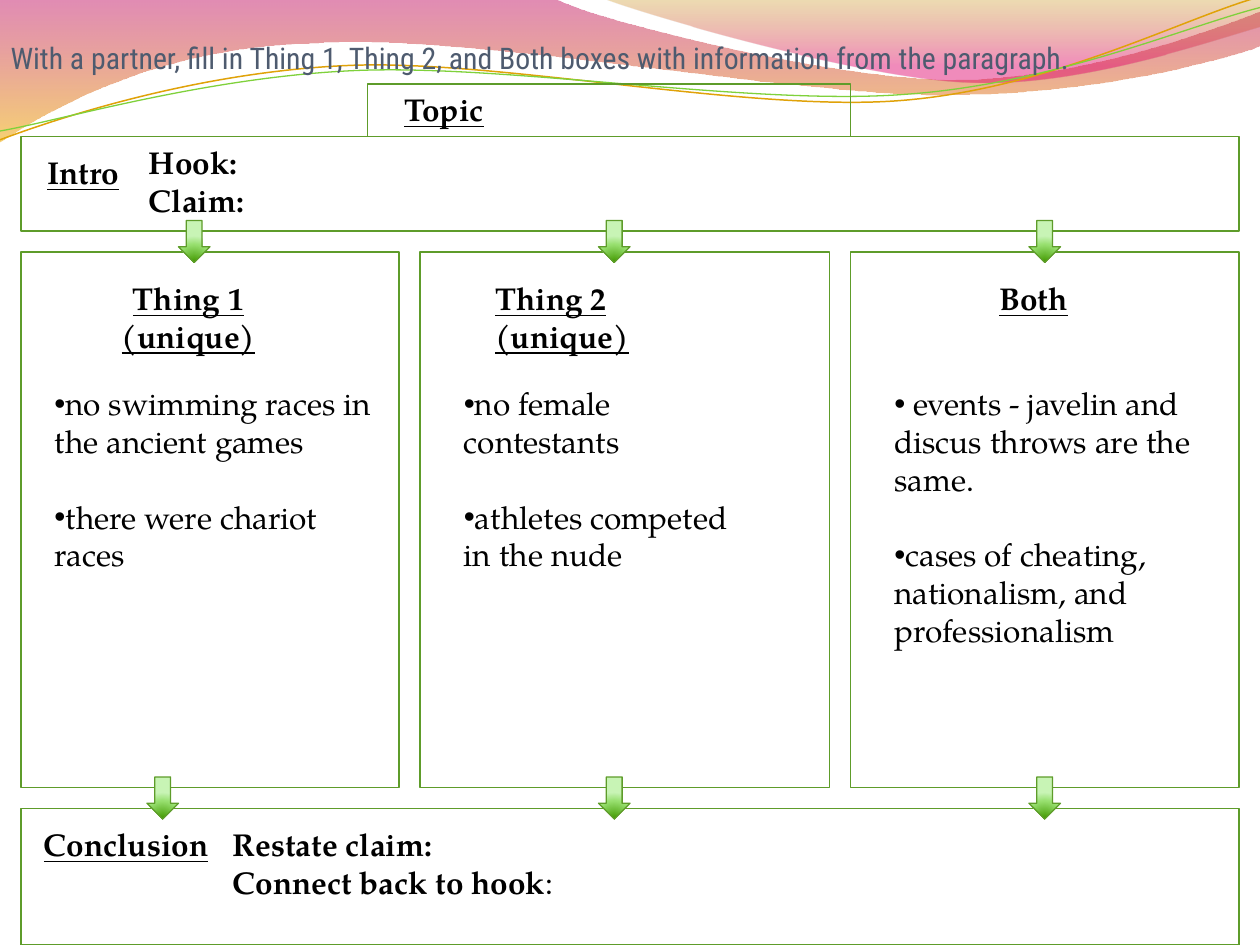
from lxml import etree
from pptx import Presentation
from pptx.dml.color import RGBColor
from pptx.enum.shapes import MSO_SHAPE as Preset
from pptx.enum.text import MSO_ANCHOR as Anchor, PP_ALIGN as Align
from pptx.oxml import parse_xml
from pptx.oxml.ns import nsdecls, qn
from pptx.util import Inches, Pt

GREEN = "5E9C2A"
ARROW_STOPS = [(0, "429A00", 100), (68, "98E06F", 100), (100, "C8F4B5", 100)]
LINEAR_DOWN = '<a:lin ang="5400000" scaled="0"/>'
RADIAL_FROM_BOTTOM = ('<a:path path="circle"><a:fillToRect l="50000" t="130000" '
                      'r="50000" b="-30000"/></a:path>')


def rgb(value):
    return RGBColor.from_string(value)


def snap(value):
    """Length on the slide's grid of twelfths of an inch."""
    return Inches(round(value * 12) / 12)


def bend(shape, segments):
    """Turn the straight segments that have control points into Bezier curves."""
    lines = list(shape._element.iter(qn("a:lnTo")))
    for line, segment in zip(lines, segments):
        if len(segment) == 1:
            continue
        curve = etree.Element(qn("a:cubicBezTo"))
        for x, y in segment:
            point = etree.SubElement(curve, qn("a:pt"))
            point.set("x", str(Inches(x) - shape.left))
            point.set("y", str(Inches(y) - shape.top))
        line.getparent().replace(line, curve)


def set_gradient(shape, stops, direction):
    """Fill with (position %, colour, opacity %) stops along a direction element."""
    stop_xml = "".join(
        f'<a:gs pos="{position * 1000}"><a:srgbClr val="{color}">'
        f'<a:alpha val="{opacity * 1000}"/></a:srgbClr></a:gs>'
        for position, color, opacity in stops)
    shape.fill.background()
    empty_fill = shape._element.spPr.find(qn("a:noFill"))
    empty_fill.getparent().replace(empty_fill, parse_xml(
        f'<a:gradFill {nsdecls("a")} rotWithShape="1"><a:gsLst>{stop_xml}</a:gsLst>'
        f'{direction}</a:gradFill>'))


class SlideBuilder:
    font = "TeX Gyre Pagella"
    size = 18
    color = "000000"

    def __init__(self, slide):
        self.slide = slide

    def outline(self, shape, color=GREEN, width=0.75):
        shape.shadow.inherit = False
        shape.line.color.rgb = rgb(color)
        shape.line.width = Pt(width)

    def wave(self, start, segments, stops=None, line=None):
        corners = [start] + [segment[-1] for segment in segments]
        points = [(Inches(x), Inches(y)) for x, y in corners]
        builder = self.slide.shapes.build_freeform(*points[0], scale=1.0)
        builder.add_line_segments(points[1:], close=stops is not None)
        shape = builder.convert_to_shape()
        bend(shape, segments)
        if stops:
            shape.shadow.inherit = False
            set_gradient(shape, stops, LINEAR_DOWN)
            shape.line.fill.background()
        else:
            shape.fill.background()
            self.outline(shape, *line)

    def box(self, *bounds):
        shape = self.slide.shapes.add_shape(Preset.RECTANGLE, *map(snap, bounds))
        shape.fill.background()
        self.outline(shape)

    def arrow(self, left, top):
        shape = self.slide.shapes.add_shape(
            Preset.DOWN_ARROW, *map(snap, (left, top, 0.25, 0.33)))
        set_gradient(shape, ARROW_STOPS, RADIAL_FROM_BOTTOM)
        self.outline(shape)

    def text(self, bounds, *paragraphs, bold=False, underline=False, align=Align.LEFT,
             font=None, size=None, color=None, bullet=False, gap=0, inset=None,
             anchor=Anchor.TOP):
        """Add a text box; a paragraph is a string or a list of (text, bold) runs."""
        left, top, width, height = bounds
        frame = self.slide.shapes.add_textbox(
            snap(left), snap(top), Inches(width), Inches(height)).text_frame
        frame.word_wrap = True
        frame.vertical_anchor = anchor
        if inset is not None:
            frame.margin_left = frame.margin_right = Inches(inset)
            frame.margin_top = frame.margin_bottom = Inches(inset)
        for index, content in enumerate(paragraphs):
            paragraph = frame.add_paragraph() if index else frame.paragraphs[0]
            paragraph.alignment = align
            if index and gap:
                paragraph.space_before = Pt(gap)
            if bullet:
                properties = paragraph._p.get_or_add_pPr()
                etree.SubElement(properties, qn("a:buFont")).set("typeface", "Arial")
                etree.SubElement(properties, qn("a:buChar")).set("char", "•")
            runs = [(content, bold)] if isinstance(content, str) else content
            for words, is_bold in runs:
                run = paragraph.add_run()
                run.text = words
                run.font.name = font or self.font
                run.font.size = Pt(size or self.size)
                run.font.color.rgb = rgb(color or self.color)
                run.font.bold = is_bold
                run.font.underline = underline

    def heading(self, bounds, words, align=Align.LEFT):
        self.text(bounds, words, bold=True, underline=True, align=align)

    def bullets(self, bounds, *items):
        self.text(bounds, *items, bullet=True, gap=21.6)


def add_waves(builder):
    builder.wave((0, 0), [
        [(4.4, -0.01)],
        [(4.76, 0.17), (6.64, 0.63), (7.58, 0.63)],
        [(8.53, 0.63), (9.58, 0.26), (10, 0.09)],
        [(10.01, 0.36)],
        [(9.83, 0.44), (8.7, 0.76), (7.46, 0.75)],
        [(6.22, 0.75), (3.82, 0.28), (2.57, 0.34)],
        [(1.29, 0.36), (0.46, 0.83), (-0.01, 1.13)],
    ], stops=[(0, "BD0059", 45), (100, "F0AB00", 55)])
    builder.wave((4.79, -0.01), [
        [(5.09, 0.11), (6.82, 0.62), (7.69, 0.65)],
        [(8.56, 0.69), (9.61, 0.32), (10, 0.21)],
        [(10, 0)],
    ], stops=[(0, "C38B00", 30), (80, "E1006B", 45)])
    builder.wave((0, 1.11), [
        [(0.48, 0.93), (1.58, 0.57), (2.77, 0.52)],
        [(3.95, 0.47), (5.93, 0.89), (7.13, 0.8)],
        [(8.33, 0.71), (9.38, 0.15), (9.98, -0.02)],
    ], line=("E0A209", 0.85))
    builder.wave((0, 1.04), [
        [(0.47, 0.96), (1.64, 0.61), (2.83, 0.56)],
        [(4.03, 0.51), (5.97, 0.84), (7.17, 0.75)],
        [(8.36, 0.67), (9.41, 0.21), (10, 0.06)],
    ], line=("7FD13B", 0.75))


def main():
    presentation = Presentation()
    presentation.slide_width, presentation.slide_height = Inches(10), Inches(7.5)
    builder = SlideBuilder(presentation.slides.add_slide(presentation.slide_layouts[6]))

    add_waves(builder)
    builder.text((0.08, 0.25, 9.92, 0.42),
                 "With a partner, fill in Thing 1, Thing 2, and Both boxes "
                 "with information from the paragraph.",
                 font="Roboto Condensed", size=17, color="4E5B6F", inset=0,
                 anchor=Anchor.MIDDLE)

    for left, width in ((3.33, 3.25), (0.17, 3), (6.75, 3.08)):
        builder.box(left, 2, width, 4.25)
    builder.box(2.92, 0.67, 3.83, 0.42)
    for top, height in ((6.42, 1.08), (1.08, 0.75)):
        builder.box(0.17, top, 9.67, height)

    builder.heading((3.83, 2.17, 2.19, 0.4), "Thing 2 (unique)")
    builder.text((1.75, 6.49, 2.88, 1.01), "Restate claim:",
                 [("Connect back to hook", True), (":", False)], bold=True)
    builder.heading((0.25, 6.5, 1.56, 0.4), "Conclusion")
    builder.heading((7.83, 2.17, 0.79, 0.4), "Both")
    builder.text((1.08, 1.08, 0.98, 0.71), "Hook:", "Claim:", bold=True)
    builder.heading((0.42, 2.17, 2.16, 0.4), "Thing 1 (unique)", Align.CENTER)
    builder.heading((0.25, 1.17, 0.82, 0.4), "Intro", Align.CENTER)
    builder.heading((3.08, 0.67, 0.88, 0.4), "Topic", Align.CENTER)

    for top, first_left in ((1.75, 1.42), (6.17, 1.17)):
        for left in (first_left, 4.75, 8.17):
            builder.arrow(left, top)

    builder.bullets((0.33, 3, 2.75, 1.62),
                    "no swimming races in the ancient games", "there were chariot races")
    builder.bullets((3.58, 3, 2.5, 1.62),
                    "no female contestants", "athletes competed in the nude")
    builder.bullets((7, 3, 2.58, 2.22),
                    " events - javelin and discus throws are the same.",
                    "cases of cheating, nationalism, and professionalism")

    presentation.save("out.pptx")


if __name__ == "__main__":
    main()
